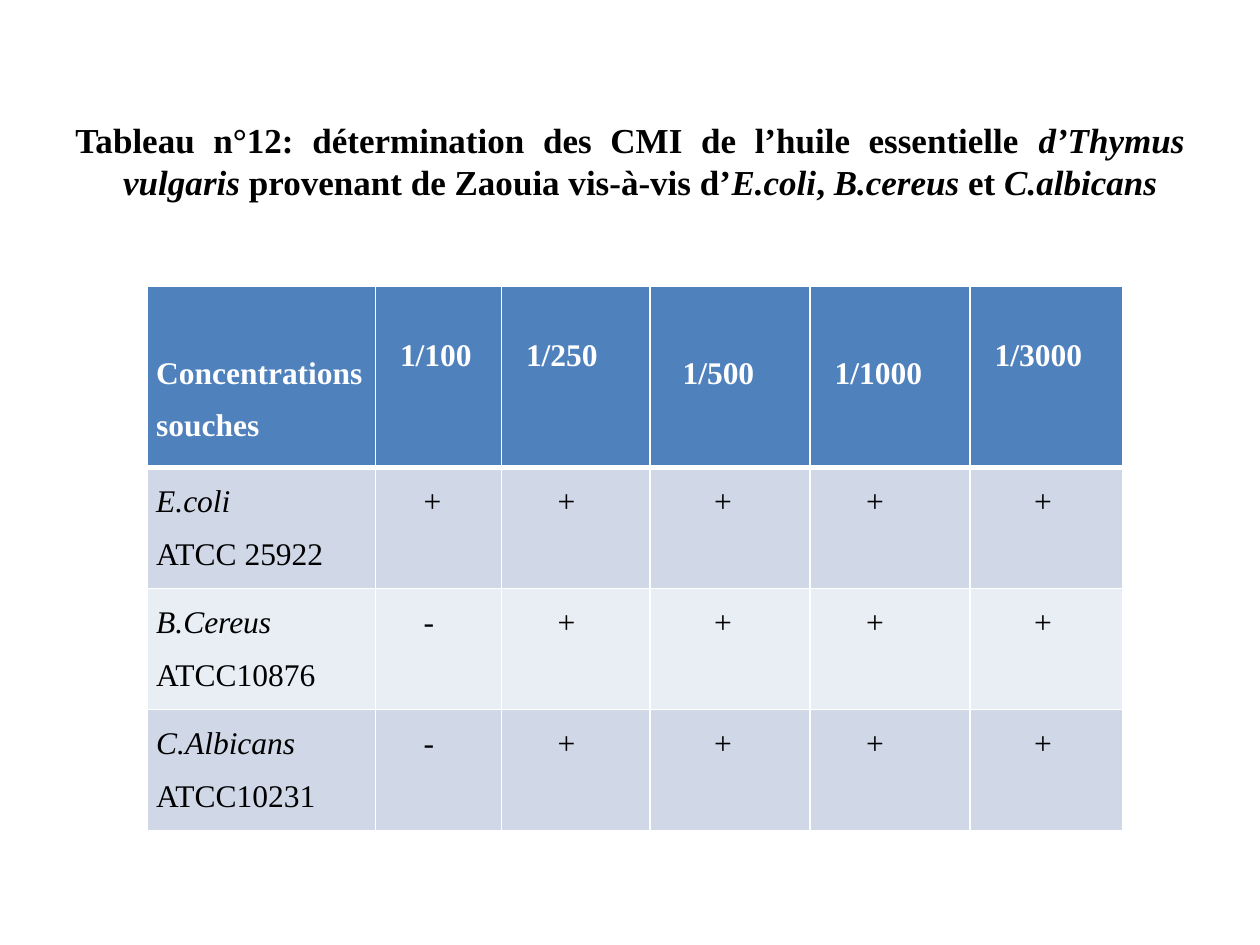
from dataclasses import dataclass

from lxml import etree
from pptx import Presentation
from pptx.dml.color import RGBColor
from pptx.enum.text import PP_ALIGN
from pptx.oxml.ns import qn
from pptx.util import Inches, Pt

JUSTIFY = PP_ALIGN.JUSTIFY
FONT = "Times New Roman"
COLORS = {
    "text": "000000",
    "white": "FFFFFF",
    "header": "4F81BD",
    "band_dark": "D0D8E8",
    "band_light": "E9EDF4",
}
INSET = 0.07
SPACE = 0.0625  # width of one space at 18 pt


@dataclass(frozen=True)
class Concentration:
    label: str
    width: float
    label_top: float
    label_indent: int
    sign_indent: int


@dataclass(frozen=True)
class Strain:
    name: str
    reference: str
    signs: str


CONCENTRATIONS = [
    Concentration("1/100", 1, 0.28, 2, 5),
    Concentration("1/250", 1.18, 0.28, 2, 6),
    Concentration("1/500", 1.27, 0.42, 3, 7),
    Concentration("1/1000", 1.27, 0.42, 2, 6),
    Concentration("1/3000", 1.21, 0.28, 2, 7),
]
STRAINS = [
    Strain("E.coli", "ATCC 25922", "+++++"),
    Strain("B.Cereus", "ATCC10876", "-++++"),
    Strain("C.Albicans", "ATCC10231", "-++++"),
]
TITLE = [
    ("Tableau n°12: détermination des CMI de l’huile essentielle ", False),
    ("d’Thymus vulgaris ", True),
    ("provenant de Zaouia vis-à-vis d’", False),
    ("E.coli", True),
    (", ", False),
    ("B.cereus", True),
    (" et ", False),
    ("C.albicans", True),
]


def rgb(name: str) -> RGBColor:
    return RGBColor.from_string(COLORS[name])


def add_span(para, text: str, size: float, color: str, bold: bool, italic: bool) -> None:
    span = para.add_run()
    span.text = text
    span.font.name = FONT
    span.font.size = Pt(size)
    span.font.bold = bold
    span.font.italic = italic
    span.font.color.rgb = rgb(color)


def add_title(page) -> None:
    box = page.shapes.add_textbox(Inches(0.5), Inches(0.47), Inches(9), Inches(6.23))
    frame = box.text_frame
    frame.word_wrap = True
    frame.margin_top = Inches(0.47)
    para = frame.paragraphs[0]
    para.alignment = JUSTIFY
    properties = para._p.get_or_add_pPr()
    properties.set("marL", str(Inches(0.38)))
    properties.set("indent", str(-Inches(0.38)))
    for text, italic in TITLE:
        add_span(para, text, 20, "text", True, italic)


def set_borders(cell, top: float, bottom: float) -> None:
    """Draw white borders; top and bottom are widths in points."""
    properties = cell._tc.get_or_add_tcPr()
    for side, width in (("L", 1), ("R", 1), ("T", top), ("B", bottom)):
        line = etree.SubElement(properties, qn(f"a:ln{side}"), w=str(Pt(width)))
        fill = etree.SubElement(line, qn("a:solidFill"))
        etree.SubElement(fill, qn("a:srgbClr"), val=COLORS["white"])


def fill_cell(cell, lines: list[tuple[str, bool]], row: int,
              indent: int = 0, top: float = 0) -> None:
    """Write (text, italic) lines, indented by a number of spaces."""
    is_header = row == 0
    set_borders(cell, 3 if row == 1 else 1, 3 if is_header else 1)
    band = "band_dark" if row % 2 else "band_light"
    cell.fill.solid()
    cell.fill.fore_color.rgb = rgb("header" if is_header else band)
    cell.margin_left = Inches(INSET + indent * SPACE)
    cell.margin_right = Inches(INSET)
    cell.margin_top = Inches(top)
    cell.margin_bottom = 0
    frame = cell.text_frame
    for index, (text, italic) in enumerate(lines):
        para = frame.add_paragraph() if index else frame.paragraphs[0]
        para.alignment = JUSTIFY
        para.line_spacing = 1.5
        add_span(para, text, 18, "white" if is_header else "text", is_header, italic)


def add_results_table(page) -> None:
    widths = [1.81] + [item.width for item in CONCENTRATIONS]
    heights = [1.44] + [0.96] * len(STRAINS)
    table = page.shapes.add_table(
        len(heights), len(widths), Inches(1.17), Inches(2.27),
        Inches(sum(widths)), Inches(sum(heights))).table
    for column, width in zip(table.columns, widths):
        column.width = Inches(width)
    for table_row, height in zip(table.rows, heights):
        table_row.height = Inches(height)

    fill_cell(table.cell(0, 0), [("Concentrations", False), ("souches", False)], 0, top=0.42)
    for col, item in enumerate(CONCENTRATIONS, 1):
        fill_cell(table.cell(0, col), [(item.label, False)], 0,
                  item.label_indent, item.label_top)
    for row, strain in enumerate(STRAINS, 1):
        fill_cell(table.cell(row, 0), [(strain.name, True), (strain.reference, False)], row)
        for col, (item, sign) in enumerate(zip(CONCENTRATIONS, strain.signs), 1):
            fill_cell(table.cell(row, col), [(sign, False)], row, item.sign_indent)


def main() -> None:
    deck = Presentation()
    deck.slide_width = Inches(10)
    deck.slide_height = Inches(7.5)
    page = deck.slides.add_slide(deck.slide_layouts[6])
    add_title(page)
    add_results_table(page)
    deck.save("out.pptx")


if __name__ == "__main__":
    main()
